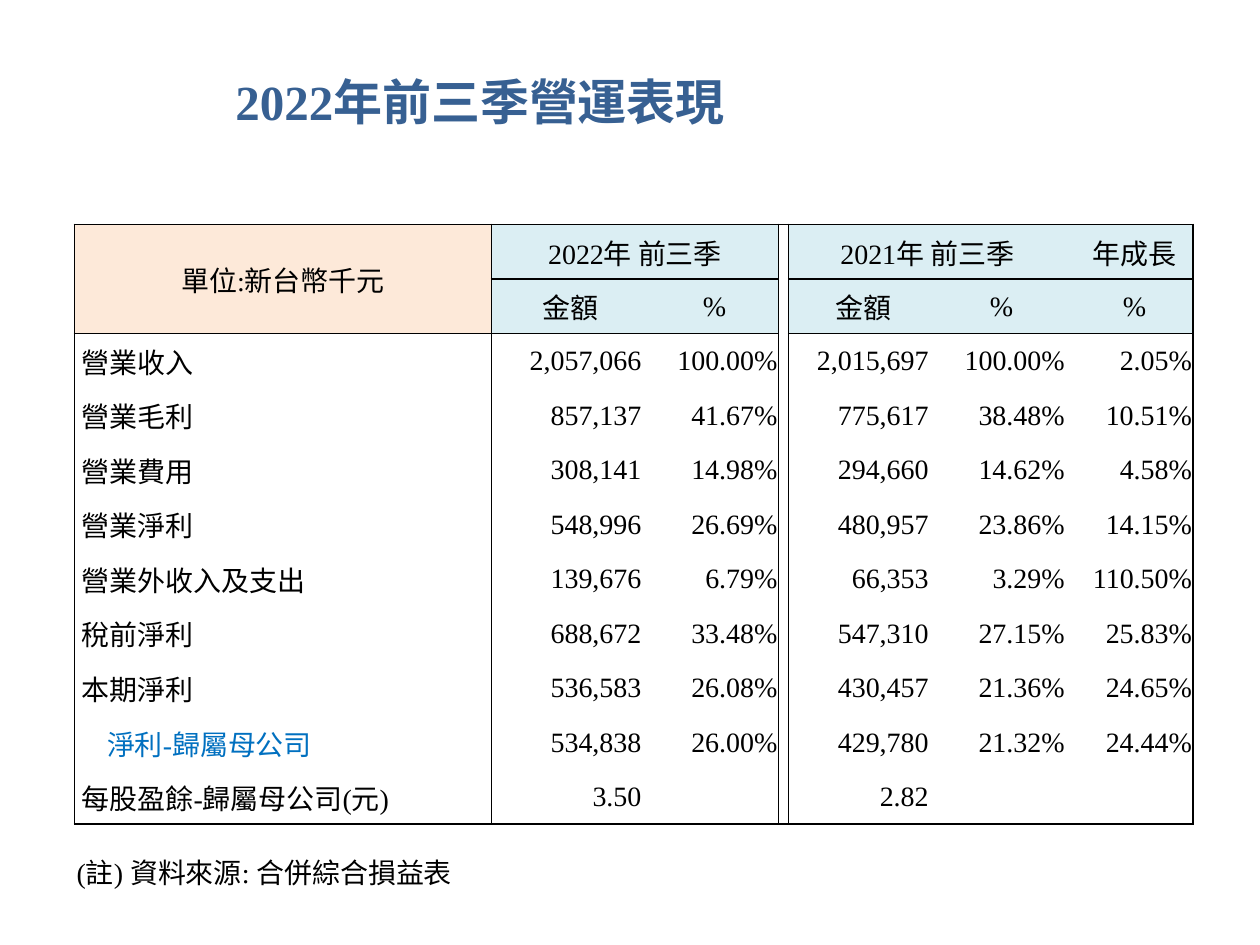
"""Builds the slide on operating results for the first three quarters of 2022."""
from lxml import etree
from pptx import Presentation
from pptx.dml.color import RGBColor
from pptx.enum.text import MSO_ANCHOR, PP_ALIGN
from pptx.oxml.ns import qn
from pptx.util import Inches, Pt

LEFT, CENTER, RIGHT = PP_ALIGN.LEFT, PP_ALIGN.CENTER, PP_ALIGN.RIGHT
MIDDLE = MSO_ANCHOR.MIDDLE
THEME = {
    "font": "Times New Roman", "title_size": 28, "text_size": 16, "line_width": 1,
    "title": "376092", "text": "000000", "parent": "0070C0",
    "unit_fill": "FDE9D9", "head_fill": "DBEEF3",
}
WIDTHS = [3.31, 1.26, 1.02, 0.08, 1.18, 1.02, 0.08, 0.93]
ROW_HEIGHT = 4.76 / 11
GAP = 3
AMOUNTS = (1, 4)
VERTICALS = {0, 1, GAP, GAP + 1, len(WIDTHS)}
PARENT_ROW = 9
ROWS = [
    ["單位:新台幣千元", "2022年 前三季", "", "", "2021年 前三季", "", "", "年成長"],
    ["", "金額", "%", "", "金額", "%", "", "%"],
    ["營業收入", "2,057,066", "100.00%", "", "2,015,697", "100.00%", "", "2.05%"],
    ["營業毛利", "857,137", "41.67%", "", "775,617", "38.48%", "", "10.51%"],
    ["營業費用", "308,141", "14.98%", "", "294,660", "14.62%", "", "4.58%"],
    ["營業淨利", "548,996", "26.69%", "", "480,957", "23.86%", "", "14.15%"],
    ["營業外收入及支出", "139,676", "6.79%", "", "66,353", "3.29%", "", "110.50%"],
    ["稅前淨利", "688,672", "33.48%", "", "547,310", "27.15%", "", "25.83%"],
    ["本期淨利", "536,583", "26.08%", "", "430,457", "21.36%", "", "24.65%"],
    ["淨利-歸屬母公司", "534,838", "26.00%", "", "429,780", "21.32%", "", "24.44%"],
    ["每股盈餘-歸屬母公司(元)", "3.50", "", "", "2.82", "", "", ""],
]


def write(tf, text, color="text", size="text_size", align=LEFT, bold=False):
    p = tf.paragraphs[0]
    p.alignment = align
    r = p.add_run()
    r.text = text
    for name, value in {"name": THEME["font"], "size": Pt(THEME[size]), "bold": bold}.items():
        setattr(r.font, name, value)
    r.font.color.rgb = RGBColor.from_string(THEME[color])


def border(cell, side, shown):
    ln = etree.SubElement(cell._tc.get_or_add_tcPr(), qn(f"a:ln{side}"),
                          w=str(Pt(THEME["line_width"])))
    if shown:
        fill = etree.SubElement(ln, qn("a:solidFill"))
        etree.SubElement(fill, qn("a:srgbClr"), val=THEME["text"])
    else:
        etree.SubElement(ln, qn("a:noFill"))


prs = Presentation()
prs.slide_width, prs.slide_height = Inches(10), Inches(7.5)
s = prs.slides.add_slide(prs.slide_layouts[6])

for box, text, style in [
    ((1.77, 0.52, 4.25, 0.57), "2022年前三季營運表現",
     {"color": "title", "size": "title_size", "bold": True}),
    ((0.51, 6.74, 3.22, 0.37), "(註) 資料來源: 合併綜合損益表", {}),
]:
    tf = s.shapes.add_textbox(*map(Inches, box)).text_frame
    tf.word_wrap = True
    write(tf, text, **style)

table = s.shapes.add_table(len(ROWS), len(WIDTHS), Inches(0.59), Inches(1.78),
                           Inches(sum(WIDTHS)), Inches(ROW_HEIGHT * len(ROWS))).table
table.first_row = table.horz_banding = False
for column, width in zip(table.columns, WIDTHS):
    column.width = Inches(width)
for row in table.rows:
    row.height = Inches(ROW_HEIGHT)
for first, last in [((0, 0), (1, 0)), ((0, 1), (0, 2)), ((0, 4), (0, 5))]:
    table.cell(*first).merge(table.cell(*last))

for i, values in enumerate(ROWS):
    for j, text in enumerate(values):
        cell = table.cell(i, j)
        head = i < 2
        indent = 0.01
        if j == 0 and not head:
            indent = 0.26 if i == PARENT_ROW else 0.06
        margins = {
            "margin_left": indent,
            "margin_right": 0.07 if j in AMOUNTS and not head else 0.01,
            "margin_top": 0.01, "margin_bottom": 0,
        }
        for name, value in margins.items():
            setattr(cell, name, Inches(value))
        cell.vertical_anchor = MIDDLE

        levels = {0, len(ROWS)}
        if j != GAP:
            levels |= {2} if j == 0 else {1, 2}
        for side, shown in {"L": j in VERTICALS, "R": j + 1 in VERTICALS,
                            "T": i in levels, "B": i + 1 in levels}.items():
            border(cell, side, shown)

        if head and j != GAP:
            cell.fill.solid()
            fill = "unit_fill" if j == 0 else "head_fill"
            cell.fill.fore_color.rgb = RGBColor.from_string(THEME[fill])
        else:
            cell.fill.background()
        if text:
            align = CENTER if head else RIGHT if j else LEFT
            color = "parent" if (i, j) == (PARENT_ROW, 0) else "text"
            write(cell.text_frame, text, color, align=align)

prs.save("out.pptx")
